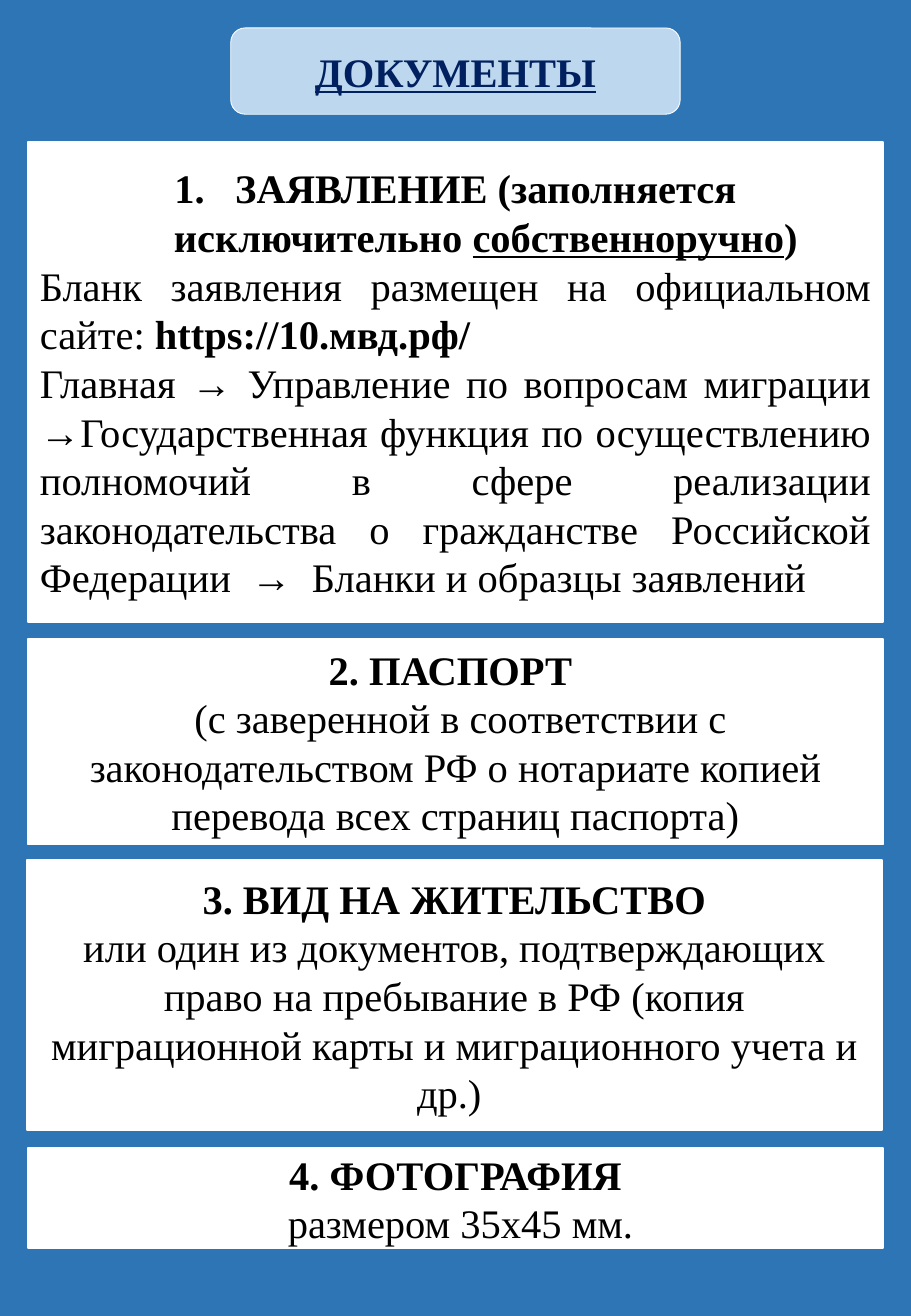
from dataclasses import dataclass

from lxml import etree
from pptx import Presentation
from pptx.dml.color import RGBColor
from pptx.enum import shapes, text
from pptx.oxml import ns
from pptx.util import Inches, Pt

FONT, SIZE = "Times New Roman", 24
BLUE, PALE, NAVY, WHITE, BLACK = "2E75B6", "BDD7EE", "002060", "FFFFFF", "000000"
CENTER, JUSTIFY = text.PP_ALIGN.CENTER, text.PP_ALIGN.JUSTIFY
TITLE_BOX = (1.9, 0.23, 3.7, 0.71)
PANEL_WIDTH = 7.04


@dataclass
class Run:
    text: str
    bold: bool = False
    underline: bool = False


@dataclass
class Para:
    runs: list[Run]
    align: int = CENTER
    numbered: bool = False


@dataclass
class Panel:
    left: float
    top: float
    height: float
    paras: list[Para]


def headed(heading: str, body: str) -> list[Para]:
    """Bold heading line followed by a plain paragraph."""
    return [Para([Run(heading, bold=True)]), Para([Run(body)])]


PANELS = [
    Panel(0.23, 1.17, 3.95, [
        Para([Run("ЗАЯВЛЕНИЕ (заполняется исключительно ", True),
              Run("собственноручно", True, True),
              Run(")", True)], numbered=True),
        Para([Run("Бланк заявления размещен на официальном сайте: "),
              Run("https://10.мвд.рф/", True)], JUSTIFY),
        Para([Run("Главная → Управление по вопросам миграции "
                  "→Государственная функция по осуществлению полномочий "
                  "в сфере реализации законодательства о гражданстве "
                  "Российской Федерации  →  Бланки и образцы заявлений")], JUSTIFY),
    ]),
    Panel(0.23, 5.26, 1.69, headed(
        "2. ПАСПОРТ ",
        " (с заверенной в соответствии с законодательством РФ о нотариате "
        "копией перевода всех страниц паспорта)")),
    Panel(0.22, 7.08, 2.22, headed(
        "3. ВИД НА ЖИТЕЛЬСТВО",
        "или один из документов, подтверждающих право на пребывание в РФ "
        "(копия миграционной карты и миграционного учета и др.) ")),
    Panel(0.23, 9.45, 0.82, headed("4. ФОТОГРАФИЯ", " размером 35х45 мм.")),
]


def color(value: str) -> RGBColor:
    return RGBColor.from_string(value)


def add_box(s, kind: int, box: tuple, fill: str, line_width: float):
    sp = s.shapes.add_shape(kind, *map(Inches, box))
    sp.shadow.inherit = False
    sp.fill.solid()
    sp.fill.fore_color.rgb = color(fill)
    sp.line.color.rgb = color(WHITE)
    sp.line.width = Pt(line_width)
    return sp


def add_run(p, run: Run, font_color: str) -> None:
    r = p.add_run()
    r.text = run.text
    r.font.name, r.font.size = FONT, Pt(SIZE)
    r.font.bold, r.font.underline = run.bold, run.underline
    r.font.color.rgb = color(font_color)


def number(p) -> None:
    """Give the paragraph an automatic number with a hanging indent."""
    pPr = p._p.get_or_add_pPr()
    pPr.set("marL", str(Inches(0.5)))
    pPr.set("indent", str(-Inches(0.5)))
    etree.SubElement(pPr, ns.qn("a:buFont"), typeface="+mj-lt")
    etree.SubElement(pPr, ns.qn("a:buAutoNum"), type="arabicPeriod")


def fill_text(tf, paras: list[Para], font_color: str) -> None:
    tf.word_wrap = True
    tf.vertical_anchor = text.MSO_ANCHOR.MIDDLE
    for i, para in enumerate(paras):
        p = tf.add_paragraph() if i else tf.paragraphs[0]
        p.alignment = para.align
        if para.numbered:
            number(p)
        for run in para.runs:
            add_run(p, run, font_color)


def add_title(s) -> None:
    add_box(s, shapes.MSO_SHAPE.ROUNDED_RECTANGLE, TITLE_BOX, PALE, 0.5)
    title = s.shapes.title
    title.left, title.top, title.width, title.height = map(Inches, TITLE_BOX)
    fill_text(title.text_frame, [Para([Run("ДОКУМЕНТЫ", True, True)])], NAVY)
    s.shapes.element.append(title.element)  # keep the title above its plate


def main() -> None:
    prs = Presentation()
    prs.slide_width, prs.slide_height = Inches(7.5), Inches(10.83)
    s = prs.slides.add_slide(prs.slide_layouts[5])
    s.background.fill.solid()
    s.background.fill.fore_color.rgb = color(BLUE)
    add_title(s)
    for panel in PANELS:
        box = (panel.left, panel.top, PANEL_WIDTH, panel.height)
        sp = add_box(s, shapes.MSO_SHAPE.RECTANGLE, box, WHITE, 1)
        fill_text(sp.text_frame, panel.paras, BLACK)
    prs.save("out.pptx")


if __name__ == "__main__":
    main()
